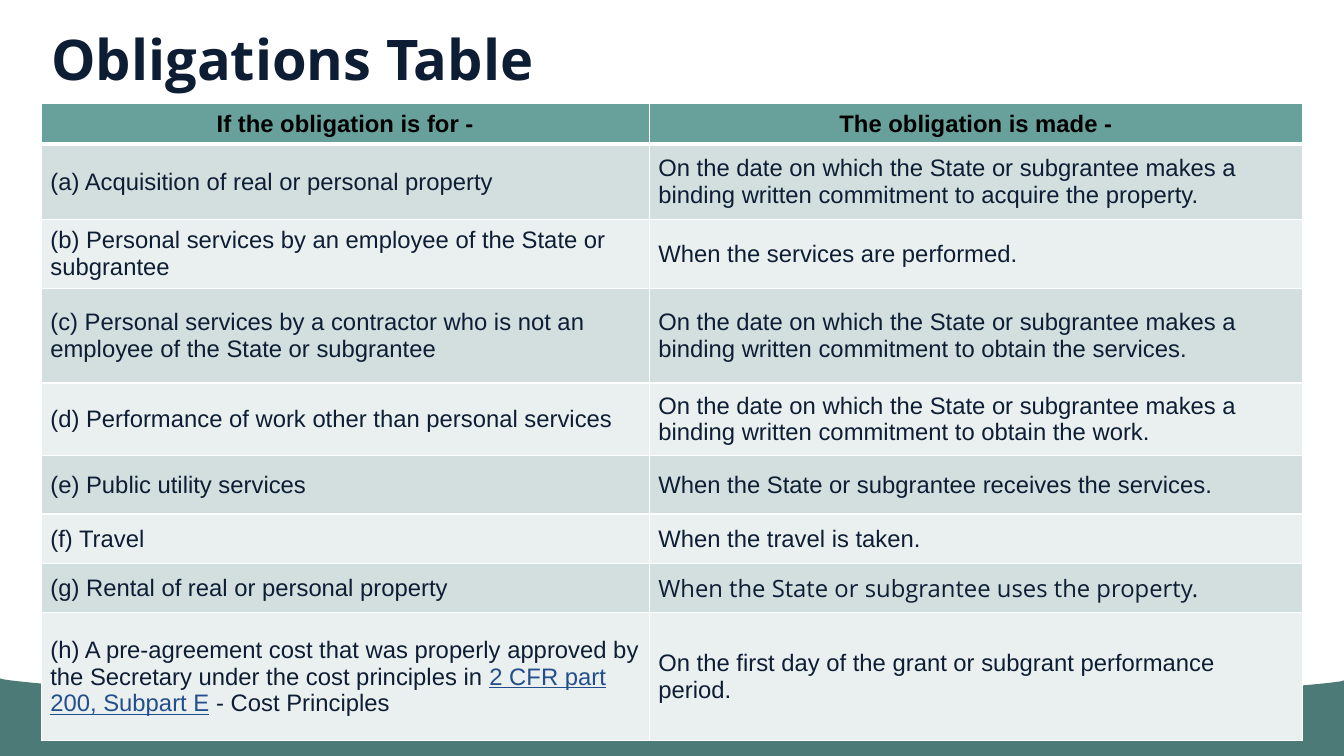
from lxml import etree
from pptx import Presentation
from pptx.dml.color import RGBColor
from pptx.enum.shapes import MSO_SHAPE
from pptx.enum.text import MSO_ANCHOR, PP_ALIGN
from pptx.oxml import parse_xml
from pptx.oxml.ns import nsdecls
from pptx.util import Inches, Pt

NAVY = RGBColor(0x0D, 0x1D, 0x34)
BLACK = RGBColor(0x00, 0x00, 0x00)
LINK_BLUE = RGBColor(0x23, 0x4E, 0x8C)
DARK_TEAL = RGBColor(0x4C, 0x7A, 0x76)
HEADER_TEAL = RGBColor(0x68, 0xA1, 0x9B)
BANDS = [RGBColor(0xEA, 0xF0, 0xEF), RGBColor(0xD2, 0xDF, 0xDE)]

COLUMN_WIDTHS = [6.03, 6.48]
ROW_HEIGHTS = [0.4, 0.75, 0.68, 0.94, 0.72, 0.58, 0.49, 0.49, 1.27]
COMMITMENT = "On the date on which the State or subgrantee makes a binding written commitment to "
CITATION = "2 CFR part 200, Subpart E"
ROWS = [
    ("If the obligation is for -", "The obligation is made -"),
    ("(a) Acquisition of real or personal property", COMMITMENT + "acquire the property."),
    ("(b) Personal services by an employee of the State or subgrantee",
     "When the services are performed."),
    ("(c) Personal services by a contractor who is not an employee of the State or subgrantee",
     COMMITMENT + "obtain the services."),
    ("(d) Performance of work other than personal services", COMMITMENT + "obtain the work."),
    ("(e) Public utility services", "When the State or subgrantee receives the services."),
    ("(f) Travel", "When the travel is taken."),
    ("(g) Rental of real or personal property",
     "When the State or subgrantee uses the property."),
    ("(h) A pre-agreement cost that was properly approved by the Secretary under the cost "
     f"principles in {CITATION} - Cost Principles",
     "On the first day of the grant or subgrant performance period."),
]
OPEN_SANS_CELL = (7, 1)

# Bezier curves around the footer wave, clockwise from the top left
WAVE_CURVES = [
    [(0, 6.73), (0, 6.78), (4.4, 7.1), (6.62, 7.11)],
    [(6.62, 7.11), (8.85, 7.11), (13.33, 6.8), (13.33, 6.75)],
    [(13.33, 7.43), (13.33, 7.48), (10.35, 7.52), (6.67, 7.52)],
    [(6.67, 7.52), (2.99, 7.52), (0, 7.48), (0, 7.43)],
]
CURVE_STEPS = 24


def curve_point(curve, t):
    weights = [(1 - t) ** 3, 3 * t * (1 - t) ** 2, 3 * t ** 2 * (1 - t), t ** 3]
    return tuple(Inches(sum(w * point[axis] for w, point in zip(weights, curve)))
                 for axis in (0, 1))


def add_border(cell, side, points):
    line = parse_xml(
        f'<a:ln{side} {nsdecls("a")} w="{Pt(points)}"><a:solidFill>'
        f'<a:srgbClr val="FFFFFF"/></a:solidFill></a:ln{side}>')
    cell._tc.get_or_add_tcPr().append(line)


deck = Presentation()
deck.slide_width, deck.slide_height = Inches(13.33), Inches(7.5)
page = deck.slides.add_slide(deck.slide_layouts[5])

# Footer
strip = page.shapes.add_shape(
    MSO_SHAPE.RECTANGLE, Inches(0), Inches(7.4), Inches(13.33), Inches(0.1))
outline = [curve_point(curve, step / CURVE_STEPS)
           for curve in WAVE_CURVES for step in range(CURVE_STEPS + 1)]
builder = page.shapes.build_freeform(*outline[0])
builder.add_line_segments(outline[1:], close=True)
wave = builder.convert_to_shape()
for shape in (strip, wave):
    shape.shadow.inherit = False
    shape.fill.solid()
    shape.fill.fore_color.rgb = DARK_TEAL
    shape.line.fill.background()

# Title
title = page.shapes.title
title.left, title.top = Inches(0.41), Inches(0.15)
title.width, title.height = Inches(11.76), Inches(0.81)
title.text_frame.text = "Obligations Table"
title.text_frame.vertical_anchor = MSO_ANCHOR.BOTTOM
heading = title.text_frame.paragraphs[0]
heading.alignment = PP_ALIGN.LEFT
heading.line_spacing = 1.02
heading.font.name, heading.font.size, heading.font.bold = "Open Sans", Pt(40), True
heading.font.color.rgb = NAVY

# Obligations table
table = page.shapes.add_table(
    len(ROWS), len(COLUMN_WIDTHS), Inches(0.41), Inches(1.03),
    Inches(sum(COLUMN_WIDTHS)), Inches(sum(ROW_HEIGHTS))).table
for column, width in zip(table.columns, COLUMN_WIDTHS):
    column.width = Inches(width)
for row, height in zip(table.rows, ROW_HEIGHTS):
    row.height = Inches(height)

for row_index, texts in enumerate(ROWS):
    is_header = row_index == 0
    for column_index, text in enumerate(texts):
        cell = table.cell(row_index, column_index)
        cell.vertical_anchor = MSO_ANCHOR.MIDDLE
        cell.margin_left = cell.margin_right = Inches(0.09)
        cell.margin_top = cell.margin_bottom = Inches(0.04)
        for side in "LRTB":
            under_header = (row_index, side) in [(0, "B"), (1, "T")]
            add_border(cell, side, 3 if under_header else 1)
        cell.fill.solid()
        cell.fill.fore_color.rgb = HEADER_TEAL if is_header else BANDS[row_index % 2]

        para = cell.text_frame.paragraphs[0]
        para.alignment = PP_ALIGN.CENTER if is_header else PP_ALIGN.LEFT
        para.font.name = "Open Sans" if (row_index, column_index) == OPEN_SANS_CELL else "Arial"
        para.font.size = Pt(17)
        para.font.bold = is_header
        para.font.color.rgb = BLACK if is_header else NAVY
        before, citation, after = text.partition(CITATION)
        for part in filter(None, (before, citation, after)):
            span = para.add_run()
            span.text = part
            if part == CITATION:
                span.font.underline = True
                span.font.color.rgb = LINK_BLUE

deck.save("out.pptx")
